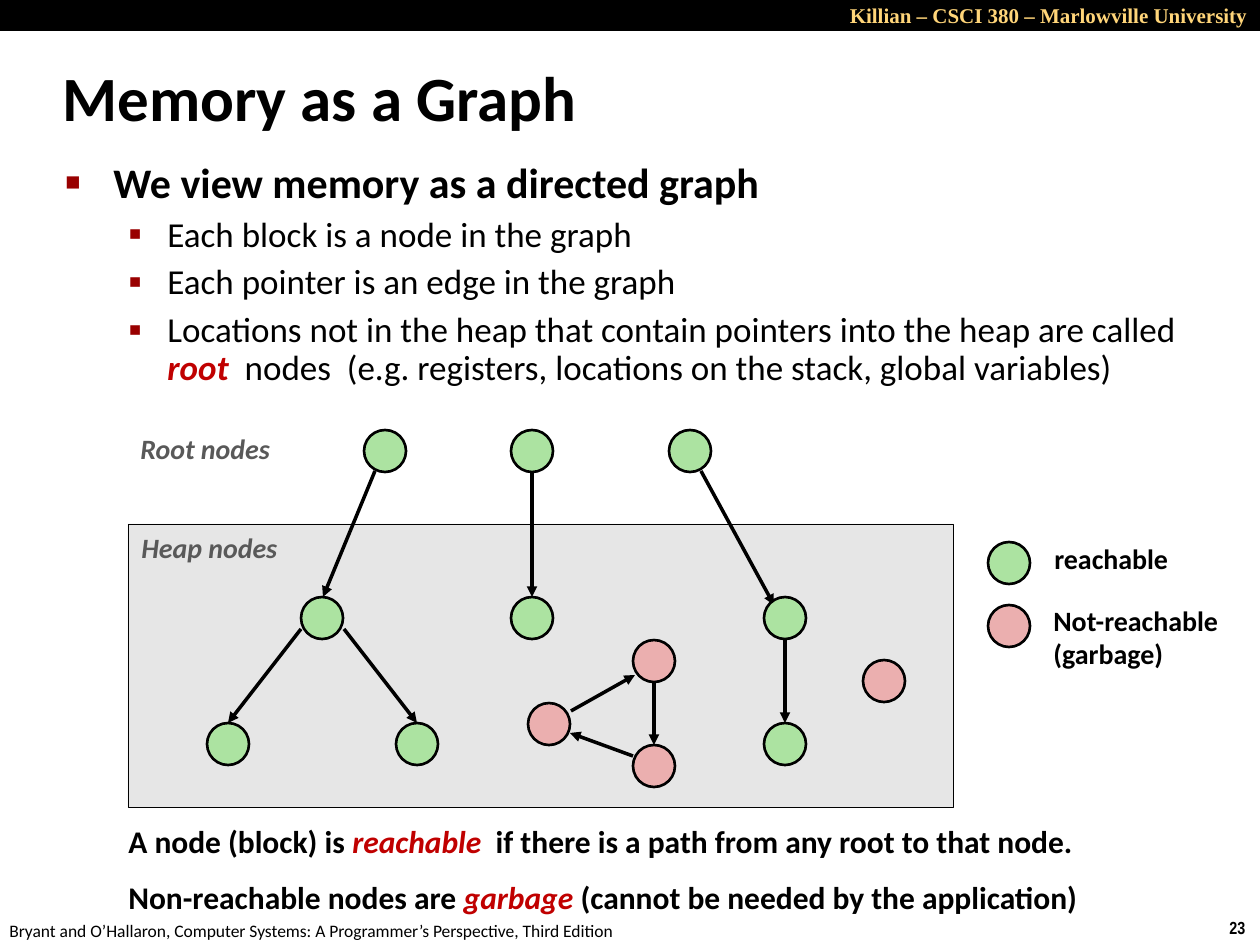
import pptx
import pptx.util
import pptx.dml.color
import pptx.enum.shapes
import pptx.enum.text
import pptx.oxml
import pptx.oxml.ns
from lxml import etree

INK, RED, GREY = "000000", "C00000", "595959"
LIVE, DEAD = "ACE3A1", "EBAFAF"
SIZE = 42

BOLD = {"bold": True}
KEY = {"bold": True, "italic": True, "color": RED}
TAG = {"bold": True, "italic": True, "color": GREY}
HEAD = {"bold": True, "color": "FFD579", "name": "Times New Roman"}
PAGE = {"bold": True, "name": "Arial Narrow"}

TOP = {"line_spacing": 0.87}
MAIN = {"line_spacing": 0.85, "space_before": 12.5}
SUB = {"line_spacing": 0.9, "space_before": 5.6}
NOTE = {"line_spacing": 0.95, "space_before": 11.2}
RIGHT = {"alignment": pptx.enum.text.PP_ALIGN.RIGHT}
SQUARE = ("■", 60, 48, 48)
DOT = ("▪", 110, 102, 39)

BARS = [((0, 0, 1260, 31), INK, None), ((128, 524, 826, 284), "E6E6E6", 0.5)]

TEXTS = [
    ((693, -4, 567, 38), True, [
        (12, RIGHT, None, [("Killian – CSCI 380 – Marlowville University", HEAD)])]),
    ((1217, 911, 43, 34), False, [(10, {}, None, [("23", PAGE)])]),
    ((-3, 914, 640, 34), False, [
        (10, {}, None, [("Bryant and O’Hallaron, Computer Systems: "
                         "A Programmer’s Perspective, Third Edition", {})])]),
    ((50, 63, 873, 79), True, [(36, TOP, None, [("Memory as a Graph", BOLD)])]),
    ((53, 158, 1167, 213), True, [
        (24, MAIN, SQUARE, [("We view memory as a directed graph", BOLD)]),
        (20, SUB, DOT, [("Each block is a node in the graph", {})]),
        (20, SUB, DOT, [("Each pointer is an edge in the graph", {})]),
        (20, SUB, DOT, [
            ("Locations not in the heap that contain pointers into the heap are called ", {}),
            ("root", KEY),
            ("  nodes  (e.g. registers, locations on the stack, global variables)", {})])]),
    ((128, 425, 159, 47), False, [(16, {}, None, [("Root nodes", TAG)])]),
    ((129, 524, 164, 47), False, [(16, {}, None, [("Heap nodes", TAG)])]),
    ((1041, 597, 193, 81), False, [(16, {}, None, [("Not-reachable\n(garbage)", BOLD)])]),
    ((1042, 535, 140, 47), False, [(16, {}, None, [("reachable", BOLD)])]),
    ((116, 819, 1021, 116), True, [
        (18, NOTE, None, [("A node (block) is ", BOLD), ("reachable", KEY),
                          ("  if there is a path from any root to that node.", BOLD)]),
        (18, NOTE, None, [("Non-reachable nodes are ", BOLD), ("garbage ", KEY),
                          ("(cannot be needed by the application)", BOLD)])]),
]

NODES = {
    LIVE: [(364, 430), (511, 430), (669, 430), (301, 597), (511, 597), (764, 597),
           (207, 723), (396, 723), (764, 723), (988, 542)],
    DEAD: [(633, 640), (633, 745), (528, 703), (863, 660), (988, 605)],
}
EDGES = [
    (375, 471, 323, 597), (532, 471, 532, 597), (701, 471, 774, 605),
    (301, 629, 228, 723), (344, 629, 417, 723), (785, 640, 785, 723),
    (654, 682, 654, 745), (633, 756, 570, 733), (571, 711, 635, 675),
]


def px(*nums):
    return [round(n * 914400 / 126) for n in nums]


def rgb(code):
    return pptx.dml.color.RGBColor.from_string(code)


def shape(kind, box, fill, width):
    item = slide.shapes.add_shape(kind, *px(*box))
    item.shadow.inherit = False
    item.fill.solid()
    item.fill.fore_color.rgb = rgb(fill)
    if width is None:
        item.line.fill.background()
    else:
        item.line.color.rgb = rgb(INK)
        item.line.width = pptx.util.Pt(width)


def child(node, tag, **attrs):
    return etree.SubElement(node, pptx.oxml.ns.qn(tag), attrs)


def bullet(para, mark, size, left, hang):
    props = para._p.get_or_add_pPr()
    props.set("marL", str(px(left)[0]))
    props.set("indent", str(-px(hang)[0]))
    child(child(props, "a:buClr"), "a:srgbClr", val="990000")
    child(props, "a:buSzPct", val=str(size * 1000))
    child(props, "a:buFont", typeface="Arial")
    child(props, "a:buChar", char=mark)


def write(para, text, size, style):
    for num, line in enumerate(text.split("\n")):
        if num:
            para.add_line_break()
        run = para.add_run()
        run.text = line
        look = {"name": "Calibri", "bold": False, "italic": False, "color": INK, **style}
        run.font.color.rgb = rgb(look.pop("color"))
        run.font.size = pptx.util.Pt(size)
        for key, val in look.items():
            setattr(run.font, key, val)


def label(box, wrap, paras):
    frame = slide.shapes.add_textbox(*px(*box)).text_frame
    frame.word_wrap = wrap
    for num, (size, form, mark, runs) in enumerate(paras):
        para = frame.add_paragraph() if num else frame.paragraphs[0]
        for key, val in form.items():
            setattr(para, key, pptx.util.Pt(val) if key == "space_before" else val)
        if mark:
            bullet(para, *mark)
        for text, style in runs:
            write(para, text, size, style)


def arrow(ends):
    kind = pptx.enum.shapes.MSO_CONNECTOR.STRAIGHT
    edge = slide.shapes.add_connector(kind, *px(*ends))
    edge.line.color.rgb = rgb(INK)
    edge.line.width = pptx.util.Pt(2)
    child(edge.line._get_or_add_ln(), "a:tailEnd", type="triangle")
    child(edge._element.spPr, "a:effectLst")


deck = pptx.Presentation()
deck.slide_width, deck.slide_height = px(1260, 945)
slide = deck.slides.add_slide(deck.slide_layouts[6])
forms = pptx.enum.shapes.MSO_SHAPE

for box, fill, width in BARS:
    shape(forms.RECTANGLE, box, fill, width)
for ends in EDGES:
    arrow(ends)
for fill, spots in NODES.items():
    for spot in spots:
        shape(forms.OVAL, (*spot, SIZE, SIZE), fill, 1.5)
for item in TEXTS:
    label(*item)

deck.save("out.pptx")
